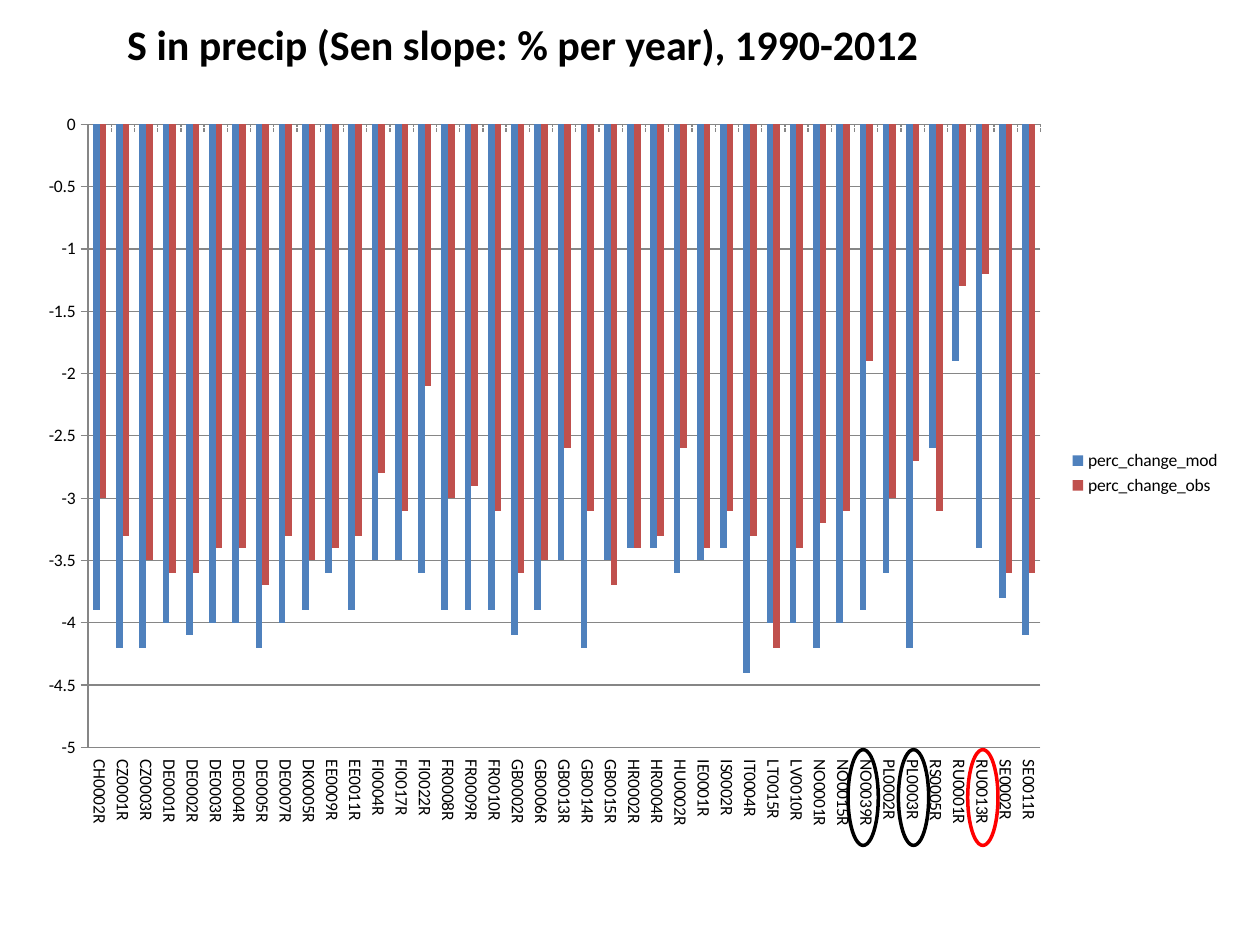
"""Build the slide on modelled and observed sulphur trends in precipitation."""
from lxml import etree
from pptx import Presentation
from pptx.chart.data import CategoryChartData
from pptx.dml.color import RGBColor
from pptx.enum.chart import XL_CHART_TYPE as ChartType, XL_LEGEND_POSITION as LegendPos
from pptx.enum.chart import XL_TICK_LABEL_POSITION as LabelPos, XL_TICK_MARK as TickMark
from pptx.enum.dml import MSO_LINE_DASH_STYLE as Dash
from pptx.enum.shapes import MSO_SHAPE as Shape
from pptx.enum.text import MSO_ANCHOR as Anchor, PP_ALIGN as Align
from pptx.oxml.ns import qn
from pptx.util import Pt

BLACK = RGBColor(0x00, 0x00, 0x00)
WHITE = RGBColor(0xFF, 0xFF, 0xFF)
RED = RGBColor(0xFF, 0x00, 0x00)
GREY = RGBColor(0x86, 0x86, 0x86)
MODEL_BLUE = RGBColor(0x4F, 0x81, 0xBD)
OBSERVED_RED = RGBColor(0xC0, 0x50, 0x4D)

STATIONS = """
CH0002R CZ0001R CZ0003R DE0001R DE0002R DE0003R DE0004R DE0005R DE0007R DK0005R
EE0009R EE0011R FI0004R FI0017R FI0022R FR0008R FR0009R FR0010R GB0002R GB0006R
GB0013R GB0014R GB0015R HR0002R HR0004R HU0002R IE0001R IS0002R IT0004R LT0015R
LV0010R NO0001R NO0015R NO0039R PL0002R PL0003R RS0005R RU0001R RU0013R SE0002R
SE0011R
""".split()
MODELLED = [
    -3.9, -4.2, -4.2, -4, -4.1, -4, -4, -4.2, -4, -3.9,
    -3.6, -3.9, -3.5, -3.5, -3.6, -3.9, -3.9, -3.9, -4.1, -3.9,
    -3.5, -4.2, -3.5, -3.4, -3.4, -3.6, -3.5, -3.4, -4.4, -4,
    -4, -4.2, -4, -3.9, -3.6, -4.2, -2.6, -1.9, -3.4, -3.8,
    -4.1,
]
OBSERVED = [
    -3, -3.3, -3.5, -3.6, -3.6, -3.4, -3.4, -3.7, -3.3, -3.5,
    -3.4, -3.3, -2.8, -3.1, -2.1, -3, -2.9, -3.1, -3.6, -3.5,
    -2.6, -3.1, -3.7, -3.4, -3.3, -2.6, -3.4, -3.1, -3.3, -4.2,
    -3.4, -3.2, -3.1, -1.9, -3, -2.7, -3.1, -1.3, -1.2, -3.6,
    -3.6,
]


def apply_format(target, values):
    for name, value in values.items():
        setattr(target, name, value)


deck = Presentation()
apply_format(deck, {"slide_width": Pt(720), "slide_height": Pt(540)})
slide = deck.slides.add_slide(deck.slide_layouts[5])

trends = CategoryChartData()
trends.categories = STATIONS
trends.add_series("perc_change_mod", MODELLED)
trends.add_series("perc_change_obs", OBSERVED)
chart = slide.shapes.add_chart(
    ChartType.COLUMN_CLUSTERED, Pt(15.84), Pt(58.3), Pt(689), Pt(424), trends
).chart
apply_format(chart, {"has_title": False, "has_legend": True})
apply_format(chart.font, {"name": "Calibri", "size": Pt(10)})
chart.font.color.rgb = BLACK
apply_format(chart.legend, {"position": LegendPos.RIGHT, "include_in_layout": False})

columns = chart.plots[0]
apply_format(columns, {"gap_width": 150, "overlap": 0, "vary_by_categories": False})
for series, color in zip(columns.series, (MODEL_BLUE, OBSERVED_RED)):
    series.invert_if_negative = False
    series.format.fill.solid()
    series.format.fill.fore_color.rgb = color

stations = chart.category_axis
slopes = chart.value_axis
apply_format(stations, {
    "tick_label_position": LabelPos.LOW,
    "major_tick_mark": TickMark.OUTSIDE,
    "has_major_gridlines": False,
})
apply_format(slopes, {
    "minimum_scale": -5,
    "maximum_scale": 0,
    "major_unit": 0.5,
    "major_tick_mark": TickMark.OUTSIDE,
    "has_major_gridlines": True,
})
for line in (stations.format.line, slopes.format.line, slopes.major_gridlines.format.line):
    line.color.rgb = GREY
    line.width = Pt(0.75)
stations.format.line.dash_style = Dash.SQUARE_DOT
apply_format(stations.tick_labels.font, {"name": "Calibri", "size": Pt(10)})
stations.tick_labels.font.color.rgb = BLACK
label_body = stations._element.find(qn("c:txPr")).find(qn("a:bodyPr"))
apply_format(label_body, {})
label_body.set("rot", "5400000")
label_body.set("vert", "horz")

plot_area = chart._chartSpace.chart.plotArea
for old_layout in plot_area.findall(qn("c:layout")):
    plot_area.remove(old_layout)
layout = etree.Element(qn("c:layout"))
manual = etree.SubElement(layout, qn("c:manualLayout"))
for tag, value in {
    "layoutTarget": "inner", "xMode": "edge", "yMode": "edge",
    "x": "0.05", "y": "0.03", "w": "0.79", "h": "0.84",
}.items():
    etree.SubElement(manual, qn(f"c:{tag}")).set("val", value)
plot_area.insert(0, layout)

for left, color in ((513.4, BLACK), (553, RED), (484.6, BLACK)):
    station_ring = slide.shapes.add_shape(Shape.OVAL, Pt(left), Pt(428.4), Pt(17.3), Pt(54.7))
    station_ring.shadow.inherit = False
    station_ring.fill.background()
    station_ring.line.color.rgb = color
    station_ring.line.width = Pt(2)

heading = slide.shapes.title
apply_format(heading, {"left": Pt(65.5), "top": Pt(7.2), "width": Pt(527), "height": Pt(36)})
heading.fill.solid()
heading.fill.fore_color.rgb = WHITE
apply_format(heading.text_frame, {
    "text": "S in precip (Sen slope: % per year), 1990-2012",
    "word_wrap": True,
    "vertical_anchor": Anchor.TOP,
})
heading_line = heading.text_frame.paragraphs[0]
heading_line.alignment = Align.LEFT
heading_font = heading_line.runs[0].font
apply_format(heading_font, {"name": "Calibri", "size": Pt(24), "bold": True})
heading_font.color.rgb = BLACK
slide.shapes._spTree.append(heading._element)

deck.save("out.pptx")
